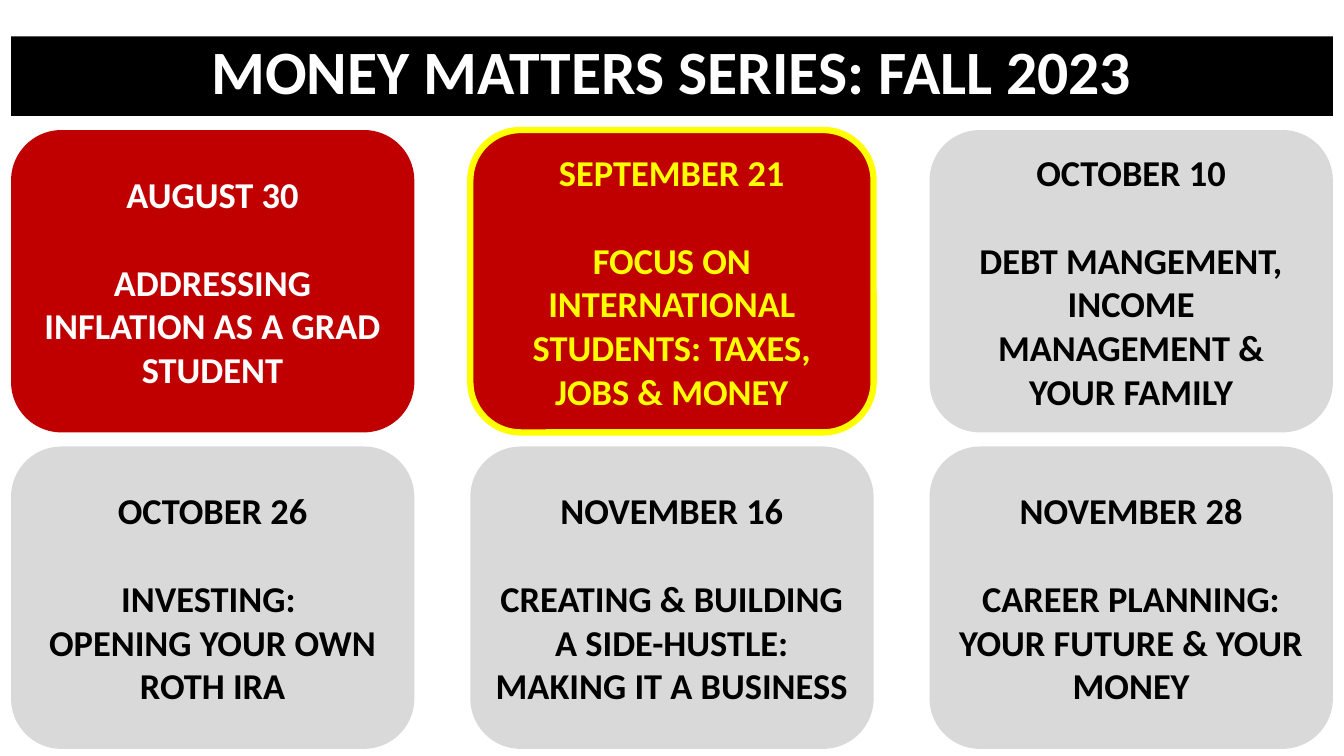
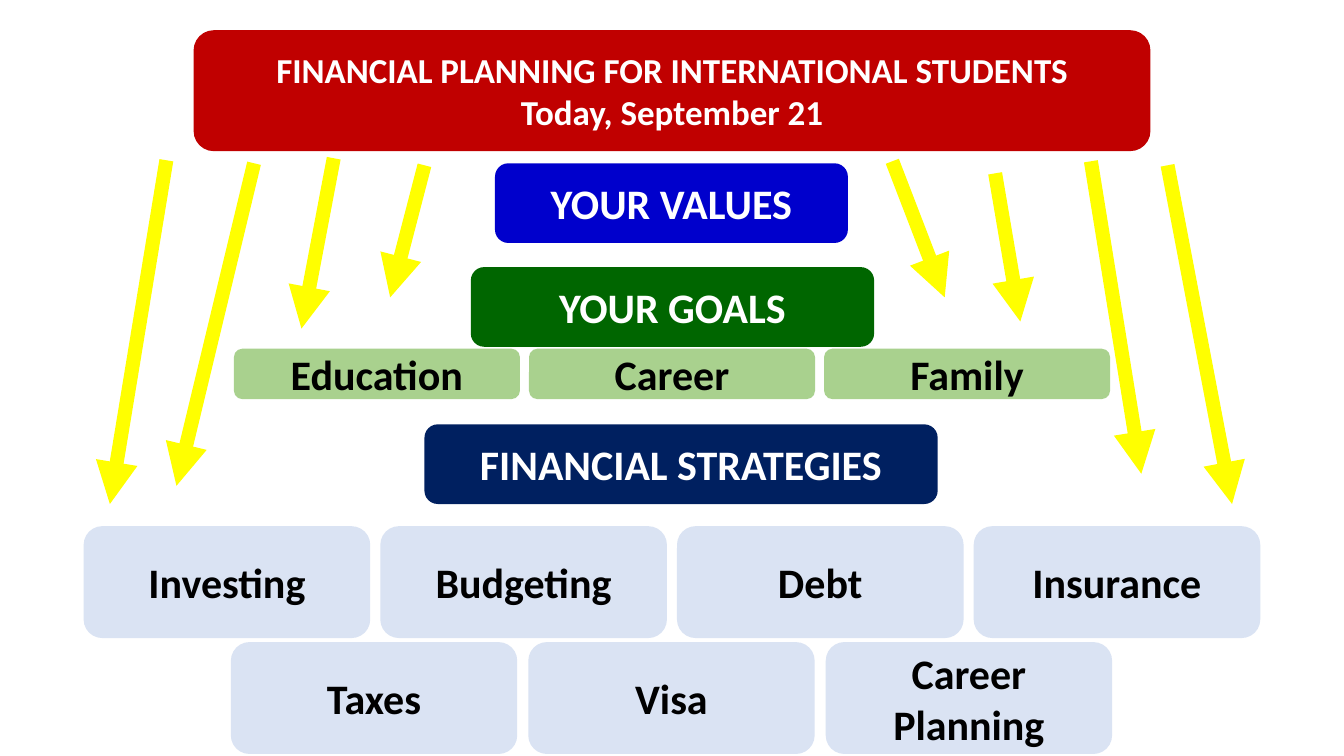
import dataclasses

import lxml.etree
import pptx
import pptx.dml.color
import pptx.enum.shapes
import pptx.enum.text
import pptx.oxml.ns
import pptx.util

Inches = pptx.util.Inches
Pt = pptx.util.Pt
SHAPES = pptx.enum.shapes.MSO_SHAPE
ANCHORS = pptx.enum.text.MSO_ANCHOR


@dataclasses.dataclass(frozen=True)
class Theme:
    """Colours, font and type sizes shared by the slides."""

    font: str = "Calibri"
    black: str = "000000"
    white: str = "FFFFFF"
    red: str = "C00000"
    yellow: str = "FFFF00"
    grey: str = "D9D9D9"
    blue: str = "0000CC"
    green: str = "006600"
    pale_green: str = "A9D18E"
    navy: str = "002060"
    pale_blue: str = "DAE3F3"
    title_size: float = 44
    label_size: float = 30
    card_size: float = 26
    banner_size: float = 25
    card_gap: float = 31.7
    outline_width: float = 4.5
    arrow_width: float = 10


THEME = Theme()

SESSIONS = [
    ("AUGUST 30", "ADDRESSING INFLATION AS A GRAD STUDENT", "past"),
    ("SEPTEMBER 21", "FOCUS ON INTERNATIONAL STUDENTS: TAXES, JOBS & MONEY", "today"),
    ("OCTOBER 10", "DEBT MANGEMENT, INCOME MANAGEMENT & YOUR FAMILY", "future"),
    ("OCTOBER 26", "INVESTING: \vOPENING YOUR OWN ROTH IRA", "future"),
    ("NOVEMBER 16", "CREATING & BUILDING A SIDE-HUSTLE: MAKING IT A BUSINESS", "future"),
    ("NOVEMBER 28", "CAREER PLANNING: YOUR FUTURE & YOUR MONEY", "future"),
]

CARD_STYLES = {
    "past": dict(fill=THEME.red, color=THEME.white),
    "today": dict(fill=THEME.red, color=THEME.yellow, outline=THEME.yellow),
    "future": dict(fill=THEME.grey, color=THEME.black),
}

ARROWS = [
    ((1.65, 1.59), (1.09, 5)),
    ((2.52, 1.62), (1.75, 4.82)),
    ((3.31, 1.57), (2.99, 3.26)),
    ((4.21, 1.64), (3.87, 2.95)),
    ((8.85, 1.6), (9.37, 2.95)),
    ((9.87, 1.72), (10.12, 3.19)),
    ((10.82, 1.6), (11.32, 4.7)),
    ((11.58, 1.64), (12.22, 5)),
]


def rgb(value):
    """Return the colour for a hexadecimal value."""
    return pptx.dml.color.RGBColor.from_string(value)


def write_text(shape, lines, size, color, anchor=ANCHORS.MIDDLE, gap=0, line_spacing=None):
    """Write centred bold paragraphs into a shape, with a gap between them."""
    frame = shape.text_frame
    frame.word_wrap = True
    frame.vertical_anchor = anchor
    for index, line in enumerate(lines):
        paragraph = frame.add_paragraph() if index else frame.paragraphs[0]
        paragraph.text = line
        paragraph.alignment = pptx.enum.text.PP_ALIGN.CENTER
        if index and gap:
            paragraph.space_before = Pt(gap)
        if line_spacing:
            paragraph.line_spacing = line_spacing
        for run in paragraph.runs:
            run.font.name = THEME.font
            run.font.size = Pt(size)
            run.font.bold = True
            run.font.color.rgb = rgb(color)


def add_panel(slide, box, lines, fill, color=THEME.white, size=THEME.label_size,
              kind=SHAPES.ROUNDED_RECTANGLE, outline=None, **text_format):
    """Add a filled panel with text in a (left, top, width, height) box."""
    shape = slide.shapes.add_shape(kind, *map(Inches, box))
    shape.shadow.inherit = False
    shape.fill.solid()
    shape.fill.fore_color.rgb = rgb(fill)
    if outline:
        shape.line.color.rgb = rgb(outline)
        shape.line.width = Pt(THEME.outline_width)
    else:
        shape.line.fill.background()
    write_text(shape, lines, size, color, **text_format)


def add_row(slide, box, labels, gap, fill):
    """Share a box among equal panels set side by side."""
    left, top, width, height = box
    panel_width = (width - gap * (len(labels) - 1)) / len(labels)
    for index, label in enumerate(labels):
        panel_left = left + index * (panel_width + gap)
        add_panel(slide, (panel_left, top, panel_width, height), [label], fill, THEME.black)


def add_arrow(slide, start, end):
    """Add a thick yellow arrow between two points."""
    connector = slide.shapes.add_connector(
        pptx.enum.shapes.MSO_CONNECTOR.STRAIGHT, *map(Inches, start + end))
    connector.line.color.rgb = rgb(THEME.yellow)
    connector.line.width = Pt(THEME.arrow_width)
    qualified = pptx.oxml.ns.qn
    line = connector.line._get_or_add_ln()
    lxml.etree.SubElement(line, qualified("a:tailEnd"), type="triangle")
    lxml.etree.SubElement(connector._element.spPr, qualified("a:effectLst"))


def add_session_grid(slide, box, columns=3, card_width=4, card_height=3):
    """Spread the session cards evenly over a box."""
    left, top, width, height = box
    rows = len(SESSIONS) // columns
    column_step = (width - card_width) / (columns - 1)
    row_step = (height - card_height) / (rows - 1)
    for index, (date, topic, status) in enumerate(SESSIONS):
        row, column = divmod(index, columns)
        card = (left + column * column_step, top + row * row_step, card_width, card_height)
        add_panel(slide, card, [date, topic], size=THEME.card_size, gap=THEME.card_gap,
                  **CARD_STYLES[status])


def build_series_slide(slide):
    """Build the overview of the series."""
    add_panel(slide, (0.11, 0.36, 13.11, 0.79), ["MONEY MATTERS SERIES: FALL 2023"],
              THEME.black, size=THEME.title_size, kind=SHAPES.RECTANGLE,
              anchor=ANCHORS.TOP, line_spacing=0.9)
    add_session_grid(slide, (0.11, 1.29, 13.11, 6.14))


def build_planning_slide(slide):
    """Build the diagram from values to goals to strategies."""
    add_panel(slide, (1.92, 0.3, 9.49, 1.2),
              ["FINANCIAL PLANNING FOR INTERNATIONAL STUDENTS", "Today, September 21"],
              THEME.red, size=THEME.banner_size)
    add_panel(slide, (4.91, 1.62, 3.5, 0.79), ["YOUR VALUES"], THEME.blue)
    add_panel(slide, (4.67, 2.65, 4, 0.79), ["YOUR GOALS"], THEME.green)
    add_row(slide, (2.32, 3.46, 8.69, 0.5), ["Education", "Career", "Family"],
            0.09, THEME.pale_green)
    add_panel(slide, (4.21, 4.21, 5.09, 0.79), ["FINANCIAL STRATEGIES"], THEME.navy)
    add_row(slide, (0.83, 5.22, 11.67, 1.11), ["Investing", "Budgeting", "Debt", "Insurance"],
            0.1, THEME.pale_blue)
    add_row(slide, (2.29, 6.37, 8.74, 1.11), ["Taxes", "Visa", "Career Planning"],
            0.11, THEME.pale_blue)
    for start, end in ARROWS:
        add_arrow(slide, start, end)


def main():
    """Build and save the presentation."""
    presentation = pptx.Presentation()
    presentation.slide_width = Inches(13.33)
    presentation.slide_height = Inches(7.5)
    for build in (build_series_slide, build_planning_slide):
        build(presentation.slides.add_slide(presentation.slide_layouts[6]))
    presentation.save("out.pptx")


if __name__ == "__main__":
    main()
